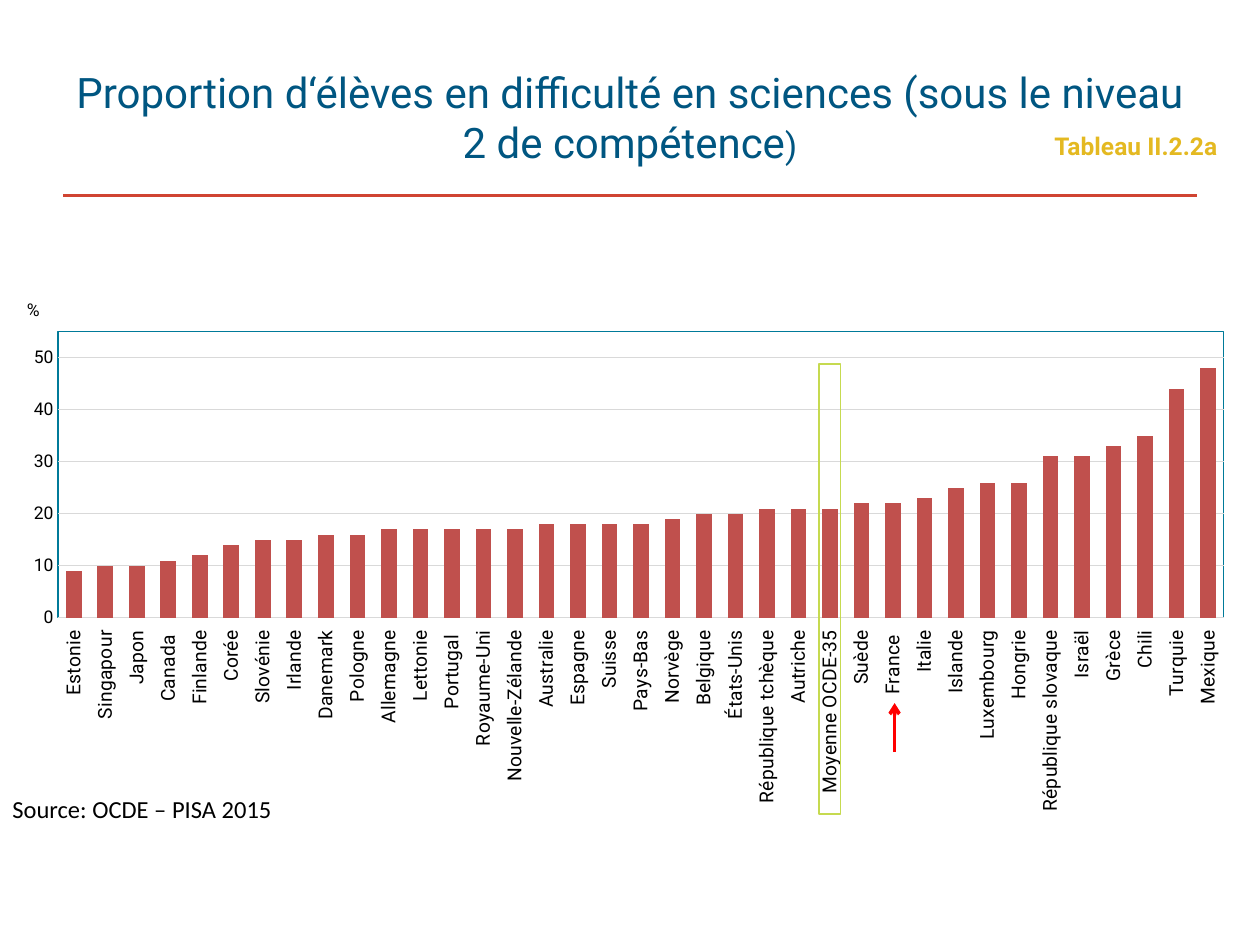
import dataclasses
import pptx
import pptx.util
import pptx.chart.data
import pptx.dml.color
import pptx.enum.chart
import pptx.enum.shapes
import pptx.enum.text
import pptx.oxml
import pptx.oxml.ns

Inches = pptx.util.Inches
Pt = pptx.util.Pt
Align = pptx.enum.text.PP_ALIGN
qn = pptx.oxml.ns.qn

HUES = {
    "title": "005681", "table": "E4B921", "rule": "D04432", "text": "000000",
    "grid": "D9D9D9", "bar": "C0504D", "frame": "007A99", "mean": "C6DA50",
    "arrow": "FF0000",
}

# Share of pupils below level 2, in percent
RATES = {
    "Estonie": 9, "Singapour": 10, "Japon": 10, "Canada ": 11, "Finlande": 12,
    "Corée": 14, "Slovénie": 15, "Irlande": 15, "Danemark": 16, "Pologne": 16,
    "Allemagne": 17, "Lettonie": 17, "Portugal ": 17, "Royaume-Uni": 17,
    "Nouvelle-Zélande": 17, "Australie": 18, "Espagne": 18, "Suisse": 18,
    "Pays-Bas": 18, "Norvège": 19, "Belgique": 20, "États-Unis": 20,
    "République tchèque": 21, "Autriche": 21, "Moyenne OCDE-35": 21,
    "Suède": 22, "France ": 22, "Italie": 23, "Islande": 25,
    "Luxembourg": 26, "Hongrie": 26, "République slovaque": 31, "Israël": 31,
    "Grèce": 33, "Chili": 35, "Turquie": 44, "Mexique": 48,
}


@dataclasses.dataclass
class Note:
    text: str
    box: tuple
    face: str
    hue: str
    bold: bool
    align: Align


@dataclasses.dataclass
class Stroke:
    start: tuple
    end: tuple
    hue: str
    head: bool = False


NOTES = [
    Note("Tableau II.2.2a", (8.11, 0.99, 1.65, 0.34), "Roboto", "table", True, Align.RIGHT),
    Note("Source: OCDE – PISA 2015", (0, 6.25, 2.8, 0.28), "Calibri", "text", False, Align.LEFT),
]
RULE = Stroke((0.5, 1.55), (9.5, 1.55), "rule")
ARROW = Stroke((7.1, 5.97), (7.1, 5.58), "arrow", True)


def rgb(hue: str) -> pptx.dml.color.RGBColor:
    return pptx.dml.color.RGBColor.from_string(HUES[hue])


def style(font, size: float, hue: str, face: str = "Roboto", bold: bool = False) -> None:
    font.size, font.name, font.bold = Pt(size), face, bold
    font.color.rgb = rgb(hue)


def pen(line, hue: str, width: float = 0.75) -> None:
    line.color.rgb = rgb(hue)
    line.width = Pt(width)


def write(slide, note: Note) -> None:
    frame = slide.shapes.add_textbox(*map(Inches, note.box)).text_frame
    frame.word_wrap = True
    para = frame.paragraphs[0]
    para.text, para.alignment = note.text, note.align
    style(para.font, 14, note.hue, note.face, note.bold)


def stroke(slide, item: Stroke) -> None:
    line = slide.shapes.add_connector(
        pptx.enum.shapes.MSO_CONNECTOR.STRAIGHT, *map(Inches, item.start + item.end))
    pen(line.line, item.hue, 2)
    props = line._element.spPr
    if item.head:
        tail = pptx.oxml.parse_xml(f'<a:tailEnd {pptx.oxml.ns.nsdecls("a")} type="arrow"/>')
        props.find(qn("a:ln")).append(tail)
    props.append(pptx.oxml.parse_xml(f'<a:effectLst {pptx.oxml.ns.nsdecls("a")}/>'))


def layout(**marks) -> object:
    """Manual chart layout; every mark is a c: element with a val."""
    body = "".join(f'<c:{name} val="{val}"/>' for name, val in marks.items())
    return pptx.oxml.parse_xml(
        f'<c:layout {pptx.oxml.ns.nsdecls("c")}><c:manualLayout>{body}'
        '</c:manualLayout></c:layout>')


def place(node, new, after: str = "") -> None:
    """Put a layout in node, first or behind the named child."""
    for old in node.findall(qn("c:layout")):
        node.remove(old)
    if after:
        node.find(qn(after)).addnext(new)
    else:
        node.insert(0, new)


def draw(slide) -> None:
    data = pptx.chart.data.CategoryChartData(number_format="0")
    data.categories = list(RATES)
    data.add_series("Series 1", list(RATES.values()))
    kinds = pptx.enum.chart
    chart = slide.shapes.add_chart(
        kinds.XL_CHART_TYPE.COLUMN_CLUSTERED,
        *map(Inches, (0.09, 2.3, 9.77, 4.16)), data).chart
    chart.has_legend = chart.has_title = False
    style(chart.font, 10, "text")

    # Bars
    plot = chart.plots[0]
    plot.gap_width, plot.overlap = 100, 50
    plot.vary_by_categories = False
    fill = plot.series[0].format.fill
    fill.solid()
    fill.fore_color.rgb = rgb("bar")

    # Axes
    cats, vals = chart.category_axis, chart.value_axis
    for axis, size in ((cats, 11), (vals, 10)):
        axis.major_tick_mark = axis.minor_tick_mark = kinds.XL_TICK_MARK.NONE
        style(axis.tick_labels.font, size, "text")
    cats.tick_label_position = kinds.XL_TICK_LABEL_POSITION.LOW
    pen(cats.format.line, "grid")
    turn = cats._element.find(qn("c:txPr")).find(qn("a:bodyPr"))
    turn.set("rot", "-5400000")
    turn.set("vert", "horz")
    vals.minimum_scale, vals.maximum_scale, vals.major_unit = 0, 55, 10
    vals.tick_labels.number_format = "0"
    vals.tick_labels.number_format_is_linked = False
    vals.format.line.fill.background()
    pen(vals.major_gridlines.format.line, "grid")

    # Unit above the value axis
    frame = vals.axis_title.text_frame
    frame.text = "%"
    style(frame.paragraphs[0].font, 10, "text")
    frame._txBody.find(qn("a:bodyPr")).set("rot", "0")
    place(vals.axis_title._element,
          layout(xMode="edge", yMode="edge", x=0.01, y=0.01), "c:tx")

    # Plot area and its frame
    area = chart._chartSpace.chart.plotArea
    place(area, layout(layoutTarget="inner", xMode="edge", yMode="edge",
                       x=0.038, y=0.08, w=0.947, h=0.546))
    area.append(pptx.oxml.parse_xml(
        f'<c:spPr {pptx.oxml.ns.nsdecls("c", "a")}><a:noFill/><a:ln w="9525"><a:solidFill>'
        f'<a:srgbClr val="{HUES["frame"]}"/></a:solidFill></a:ln></c:spPr>'))


def main() -> None:
    deck = pptx.Presentation()
    deck.slide_width, deck.slide_height = Inches(10), Inches(7.5)
    slide = deck.slides.add_slide(deck.slide_layouts[5])

    # Title and rule
    stroke(slide, RULE)
    title = slide.shapes.title
    title.left, title.top, title.width, title.height = map(Inches, (0.5, 0.3, 9, 1.25))
    frame = title.text_frame
    frame.auto_size = pptx.enum.text.MSO_AUTO_SIZE.NONE
    frame.vertical_anchor = pptx.enum.text.MSO_ANCHOR.MIDDLE
    para = frame.paragraphs[0]
    para.alignment = Align.CENTER
    style(para.font, 24, "title")
    para.add_run().text = (
        "Proportion d‘élèves en difficulté en sciences (sous le niveau 2 de compétence")
    close = para.add_run()
    close.text, close.font.size = ")", Pt(20)

    # Chart with the mean boxed and France pointed out
    draw(slide)
    mean = slide.shapes.add_shape(
        pptx.enum.shapes.MSO_SHAPE.RECTANGLE, *map(Inches, (6.5, 2.89, 0.17, 3.57)))
    mean.shadow.inherit = False
    mean.fill.background()
    pen(mean.line, "mean")
    stroke(slide, ARROW)

    # Table number and source
    for note in NOTES:
        write(slide, note)
    deck.save("out.pptx")


if __name__ == "__main__":
    main()
